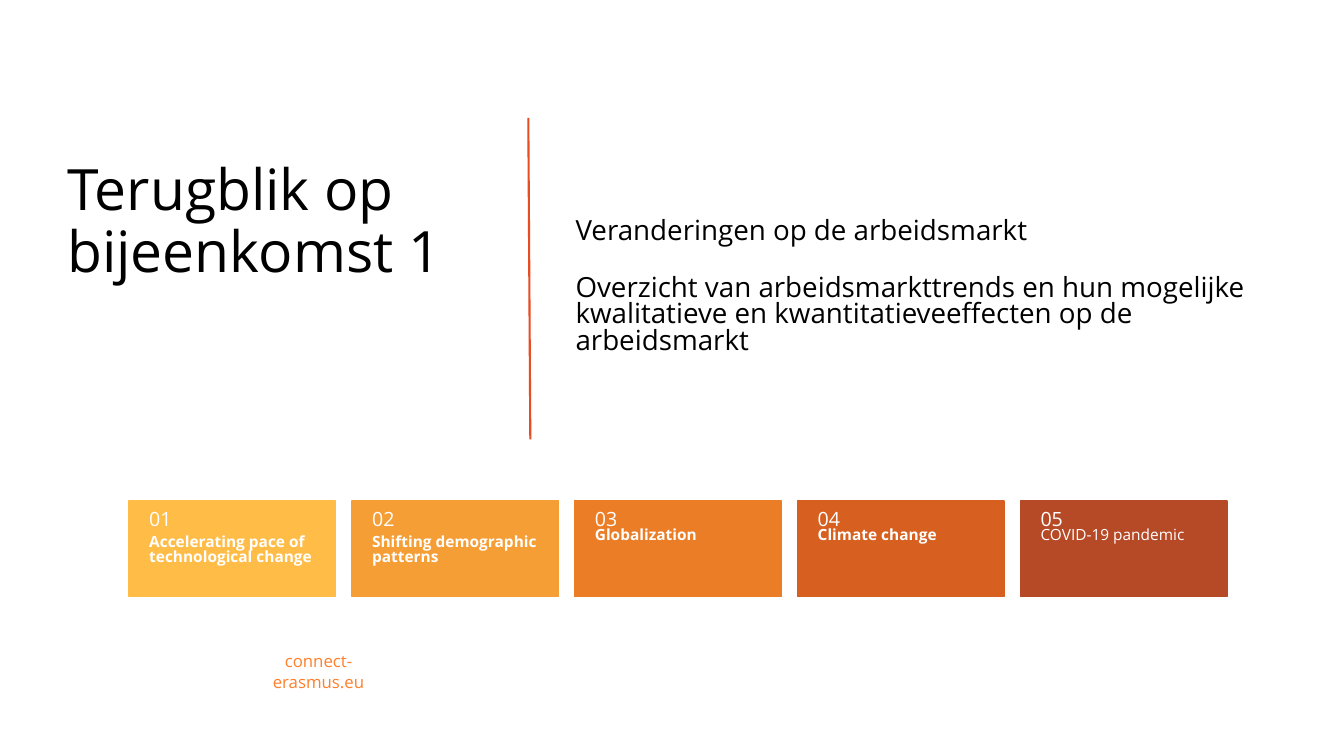
from pptx import Presentation
from pptx import util as u
from pptx.dml import color
from pptx.enum import shapes, text
from pptx.oxml import ns
from lxml import etree


def rgb(value):
    return color.RGBColor.from_string(value)


class SlideBuilder:
    font = "Open Sans"
    accent = "E84C22"

    def __init__(self, page):
        self.page = page

    def text(self, left, top, width, height, lines, size, tone="000000", bold=False,
             align=text.PP_ALIGN.LEFT, anchor=text.MSO_ANCHOR.BOTTOM,
             spacing=None, gap=0, insets=(0.1, 0.05, 0.1, 0.05)):
        box = self.page.shapes.add_textbox(
            u.Inches(left), u.Inches(top), u.Inches(width), u.Inches(height))
        frame = box.text_frame
        frame.word_wrap = True
        frame.vertical_anchor = anchor
        (frame.margin_left, frame.margin_top,
         frame.margin_right, frame.margin_bottom) = map(u.Inches, insets)
        for index, line in enumerate(lines):
            para = frame.add_paragraph() if index else frame.paragraphs[0]
            para.text = line
            para.alignment = align
            if spacing:
                para.line_spacing = spacing
            if index:
                para.space_before = u.Pt(gap)
            para.font.name = self.font
            para.font.size = u.Pt(size)
            para.font.bold = bold
            para.font.color.rgb = rgb(tone)

    def rectangle(self, left, top, width, height, fill):
        shape = self.page.shapes.add_shape(
            shapes.MSO_SHAPE.RECTANGLE,
            u.Inches(left), u.Inches(top), u.Inches(width), u.Inches(height))
        shape.shadow.inherit = False
        shape.fill.solid()
        shape.fill.fore_color.rgb = rgb(fill)
        shape.line.color.rgb = rgb(fill)
        shape.line.width = u.Pt(1)

    def line(self, x1, y1, x2, y2):
        connector = self.page.shapes.add_connector(
            shapes.MSO_CONNECTOR.STRAIGHT,
            u.Inches(x1), u.Inches(y1), u.Inches(x2), u.Inches(y2))
        connector.line.color.rgb = rgb(self.accent)
        connector.line.width = u.Pt(1.5)
        etree.SubElement(connector._element.spPr, ns.qn("a:effectLst"))

    def card(self, left, number, label, fill, bold):
        top, width = 4.97, 2.05
        self.rectangle(left, top, width, 0.95, fill)
        self.text(left, top + 0.38, width, 0.57, [label], 11, "FFFFFF", bold,
                  anchor=text.MSO_ANCHOR.TOP, spacing=0.8, insets=(0.2, 0, 0.2, 0.36))
        self.text(left, top, width, 0.38, [f"{number:02d}"], 14, "FFFFFF",
                  anchor=text.MSO_ANCHOR.MIDDLE, spacing=0.9,
                  insets=(0.2, 0.18, 0.2, 0.18))


def main():
    deck = Presentation()
    deck.slide_width, deck.slide_height = u.Inches(13.33), u.Inches(7.5)
    builder = SlideBuilder(deck.slides.add_slide(deck.slide_layouts[6]))

    builder.text(5.61, 1.87, 7.08, 1.71, [
        "Veranderingen op de arbeidsmarkt",
        "Overzicht van arbeidsmarkttrends en hun mogelijke kwalitatieve en "
        "kwantitatieveeffecten op de arbeidsmarkt",
    ], 19.8, spacing=0.8, gap=21.5)
    builder.text(2.28, 6.51, 1.76, 0.3, ["connect-erasmus.eu"], 12, "FF7F2A",
                 align=text.PP_ALIGN.CENTER, anchor=text.MSO_ANCHOR.MIDDLE,
                 insets=(0.12, 0.05, 0.12, 0.05))
    builder.text(0.57, 1.37, 4.54, 1.5, ["Terugblik op bijeenkomst 1"], 40.7, spacing=0.9)
    builder.line(5.24, 1.17, 5.26, 4.36)

    trends = [
        ("Accelerating pace of technological change", "FFBD47", True),
        ("Shifting demographic patterns", "F69E36", True),
        ("Globalization", "EB7D26", True),
        ("Climate change", "D75F20", True),
        ("COVID-19 pandemic", "B64926", False),
    ]
    for index, (label, fill, bold) in enumerate(trends):
        builder.card(1.28 + index * 2.21, index + 1, label, fill, bold)

    deck.save("out.pptx")


if __name__ == "__main__":
    main()
